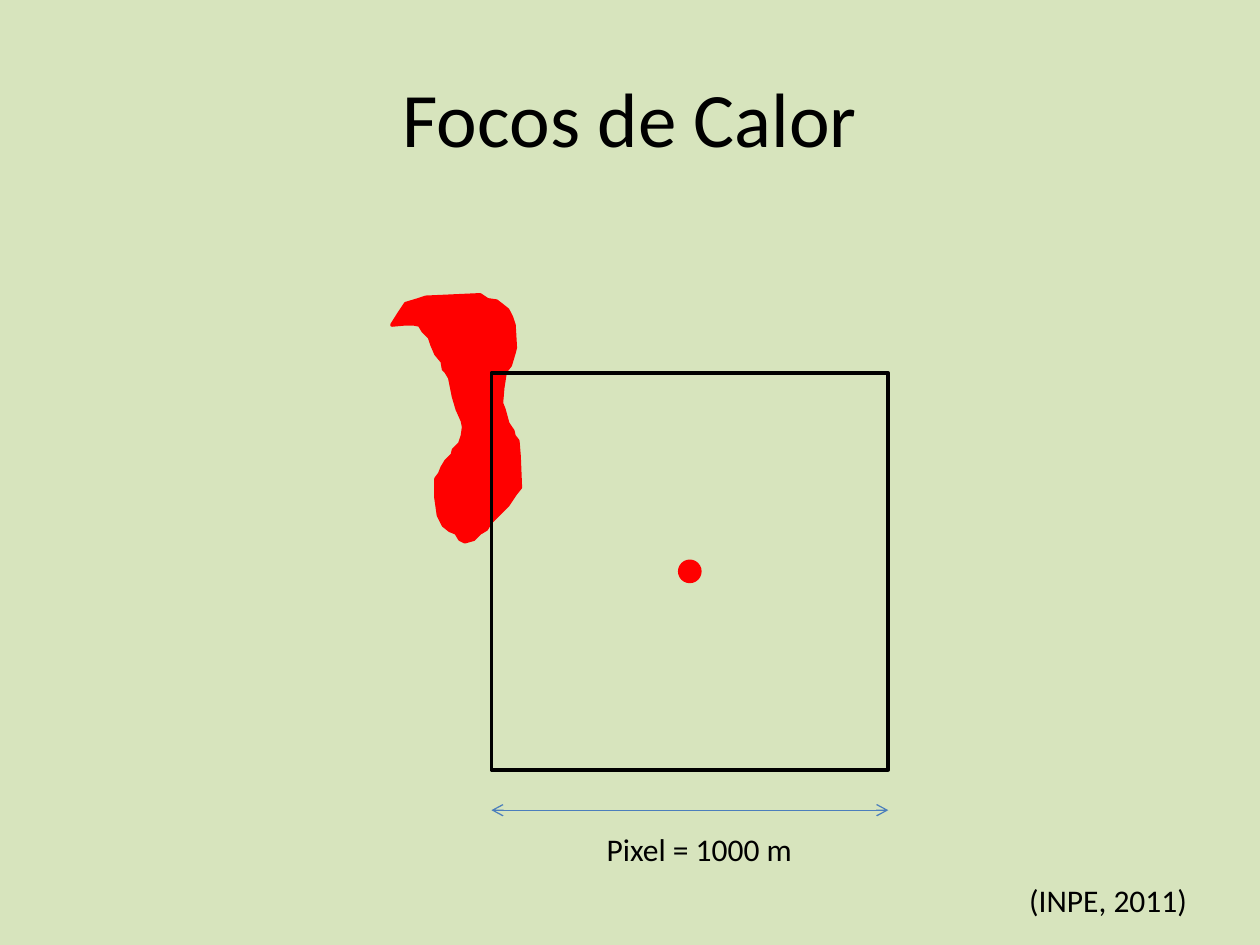
from pptx import Presentation
from pptx.dml.color import RGBColor
from pptx.enum.shapes import MSO_CONNECTOR as Conn, MSO_SHAPE as Shape
from pptx.enum.text import MSO_ANCHOR as Anchor, MSO_AUTO_SIZE as Auto, PP_ALIGN as Align
from pptx.oxml.ns import qn
from pptx.util import Pt
from lxml import etree

BG, RED, BLACK, BLUE = "D7E4BD", "FF0000", "000000", "4B7EBC"
SQUARE_X, SQUARE_Y, SIDE = 280.8, 213.12, 226.8
DOT = 11.52
ARROW_Y = 462.96
TEXTS = [
    ("Focos de Calor", (36, 21.6, 648, 90), 44, Align.CENTER, Anchor.MIDDLE, True),
    ("Pixel = 1000 m", (320.4, 470.88, 158.4, 28.8), 18, Align.CENTER, Anchor.TOP, True),
    ("(INPE, 2011)", (581.04, 499.68, 111.6, 28.8), 18, Align.LEFT, Anchor.TOP, False),
]
FIRE_UNIT = 0.72
FIRE = [
    (311, 258), (322, 257), (328, 257), (333, 258), (336, 263), (341, 268),
    (343, 274), (346, 281), (351, 287), (352, 293), (354, 295), (357, 300),
    (360, 315), (363, 325), (367, 334), (368, 339), (367, 346), (365, 352),
    (360, 357), (359, 361), (354, 366), (351, 371), (349, 376), (346, 380),
    (346, 395), (348, 409), (352, 417), (357, 421), (362, 423), (365, 428),
    (369, 430), (376, 428), (381, 423), (386, 420), (389, 415), (403, 401),
    (409, 392), (413, 387), (412, 362), (411, 350), (408, 346), (407, 342),
    (403, 336), (400, 325), (398, 320), (399, 308), (401, 295), (405, 290),
    (408, 280), (409, 276), (408, 258), (406, 252), (403, 246), (398, 242),
    (394, 239), (387, 238), (381, 234), (338, 236), (332, 238), (322, 241),
    (316, 250),
]


def color(value):
    return RGBColor.from_string(value)


def style(sp, line, fill=None):
    sp.shadow.inherit = False
    if fill:
        sp.fill.solid()
        sp.fill.fore_color.rgb = color(fill)
    else:
        sp.fill.background()
    sp.line.color.rgb = color(line)
    sp.line.width = Pt(2)


def add_text(s, text, box, size, align, anchor, wrap):
    tf = s.shapes.add_textbox(*map(Pt, box)).text_frame
    tf.word_wrap = wrap
    tf.vertical_anchor = anchor
    if anchor == Anchor.TOP:
        tf.auto_size = Auto.SHAPE_TO_FIT_TEXT
    p = tf.paragraphs[0]
    p.alignment = align
    r = p.add_run()
    r.text = text
    r.font.name = "Calibri"
    r.font.size = Pt(size)
    r.font.color.rgb = color(BLACK)


def add_double_arrow(s, x1, x2, y):
    cx = s.shapes.add_connector(Conn.STRAIGHT, Pt(x1), Pt(y), Pt(x2), Pt(y))
    cx.line.color.rgb = color(BLUE)
    cx.line.width = Pt(0.75)
    ln = cx.line._get_or_add_ln()
    for end in ("a:headEnd", "a:tailEnd"):
        etree.SubElement(ln, qn(end), type="arrow")
    etree.SubElement(cx._element.spPr, qn("a:effectLst"))


def main():
    prs = Presentation()
    prs.slide_width, prs.slide_height = Pt(720), Pt(540)
    s = prs.slides.add_slide(prs.slide_layouts[6])
    s.background.fill.solid()
    s.background.fill.fore_color.rgb = color(BG)

    outline = s.shapes.build_freeform(*FIRE[0], scale=Pt(FIRE_UNIT))
    outline.add_line_segments(FIRE[1:], close=True)
    style(outline.convert_to_shape(), RED, RED)

    square = s.shapes.add_shape(Shape.RECTANGLE, Pt(SQUARE_X), Pt(SQUARE_Y), Pt(SIDE), Pt(SIDE))
    style(square, BLACK)

    inset = (SIDE - DOT) / 2
    dot = s.shapes.add_shape(Shape.OVAL, Pt(SQUARE_X + inset), Pt(SQUARE_Y + inset), Pt(DOT), Pt(DOT))
    style(dot, RED, RED)

    add_double_arrow(s, SQUARE_X, SQUARE_X + SIDE, ARROW_Y)
    for item in TEXTS:
        add_text(s, *item)
    prs.save("out.pptx")


if __name__ == "__main__":
    main()
